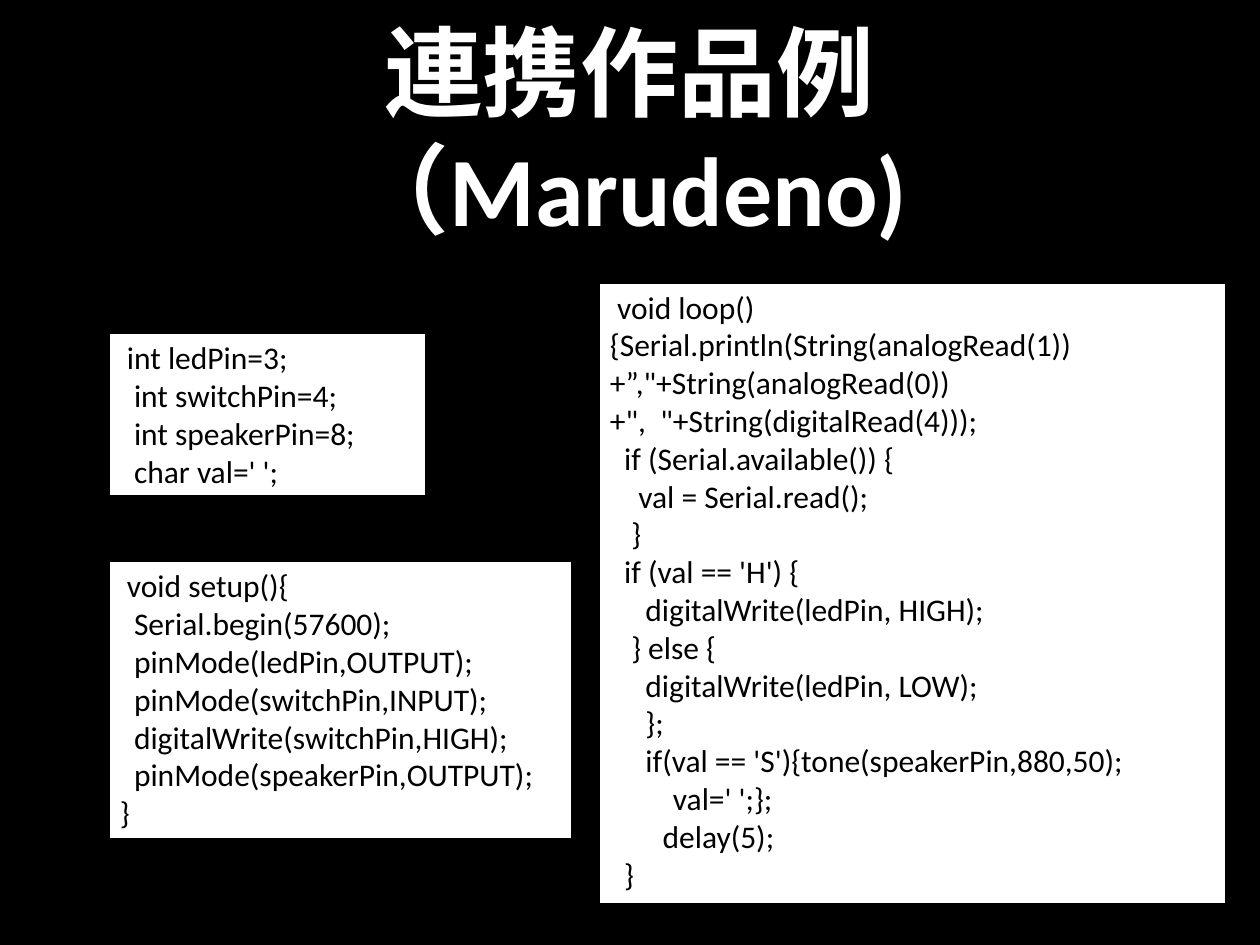
from pptx import Presentation
from pptx.dml.color import RGBColor
from pptx.enum.shapes import MSO_SHAPE
from pptx.enum.text import MSO_ANCHOR, PP_ALIGN
from pptx.util import Pt

COLORS = {"background": "000000", "title": "FFFFFF", "panel": "FFFFFF", "code": "000000"}
FONT = "Calibri"

VARIABLES = """\
 int ledPin=3;
  int switchPin=4;
  int speakerPin=8;
  char val=' ';"""

SETUP = """\
 void setup(){
  Serial.begin(57600);
  pinMode(ledPin,OUTPUT);
  pinMode(switchPin,INPUT);
  digitalWrite(switchPin,HIGH);
  pinMode(speakerPin,OUTPUT);
}"""

LOOP = """\
 void loop(){Serial.println(String(analogRead(1))+”,"+String(analogRead(0))
+",  "+String(digitalRead(4)));
  if (Serial.available()) {
    val = Serial.read();
   }
  if (val == 'H') {
     digitalWrite(ledPin, HIGH);
   } else {
     digitalWrite(ledPin, LOW);
     };
     if(val == 'S'){tone(speakerPin,880,50);
　　val=' ';};
 　  delay(5);
  }"""


def color(name):
    return RGBColor.from_string(COLORS[name])


def format_paragraph(p, size, color_name, align, bold=False):
    p.alignment = align
    p.font.name = FONT
    p.font.size = Pt(size)
    p.font.bold = bold
    p.font.color.rgb = color(color_name)


def set_title(s, text, left, top, width, height):
    title = s.shapes.title
    title.left, title.top, title.width, title.height = map(Pt, (left, top, width, height))
    tf = title.text_frame
    tf.text = text
    tf.word_wrap = True
    tf.vertical_anchor = MSO_ANCHOR.MIDDLE
    format_paragraph(tf.paragraphs[0], 56, "title", PP_ALIGN.CENTER, bold=True)


def add_code_panel(s, code, left, top, width, height):
    sp = s.shapes.add_shape(MSO_SHAPE.RECTANGLE, *map(Pt, (left, top, width, height)))
    sp.shadow.inherit = False
    sp.fill.solid()
    sp.fill.fore_color.rgb = color("panel")
    sp.line.color.rgb = color("background")
    sp.line.width = Pt(2.5)
    tf = sp.text_frame
    tf.word_wrap = True
    tf.vertical_anchor = MSO_ANCHOR.TOP
    tf.text = code
    for p in tf.paragraphs:
        format_paragraph(p, 18, "code", PP_ALIGN.LEFT)


def main():
    prs = Presentation()
    prs.slide_width, prs.slide_height = Pt(720), Pt(540)
    s = prs.slides.add_slide(prs.slide_layouts[5])
    s.background.fill.solid()
    s.background.fill.fore_color.rgb = color("background")

    set_title(s, "連携作品例（Marudeno)", 61.2, 8.4, 596.9, 130.3)
    add_code_panel(s, VARIABLES, 61.4, 189.8, 183, 94.3)
    add_code_panel(s, SETUP, 61.4, 320.1, 266.4, 159.8)
    add_code_panel(s, LOOP, 341.5, 160.8, 360, 356.4)
    prs.save("out.pptx")


if __name__ == "__main__":
    main()
